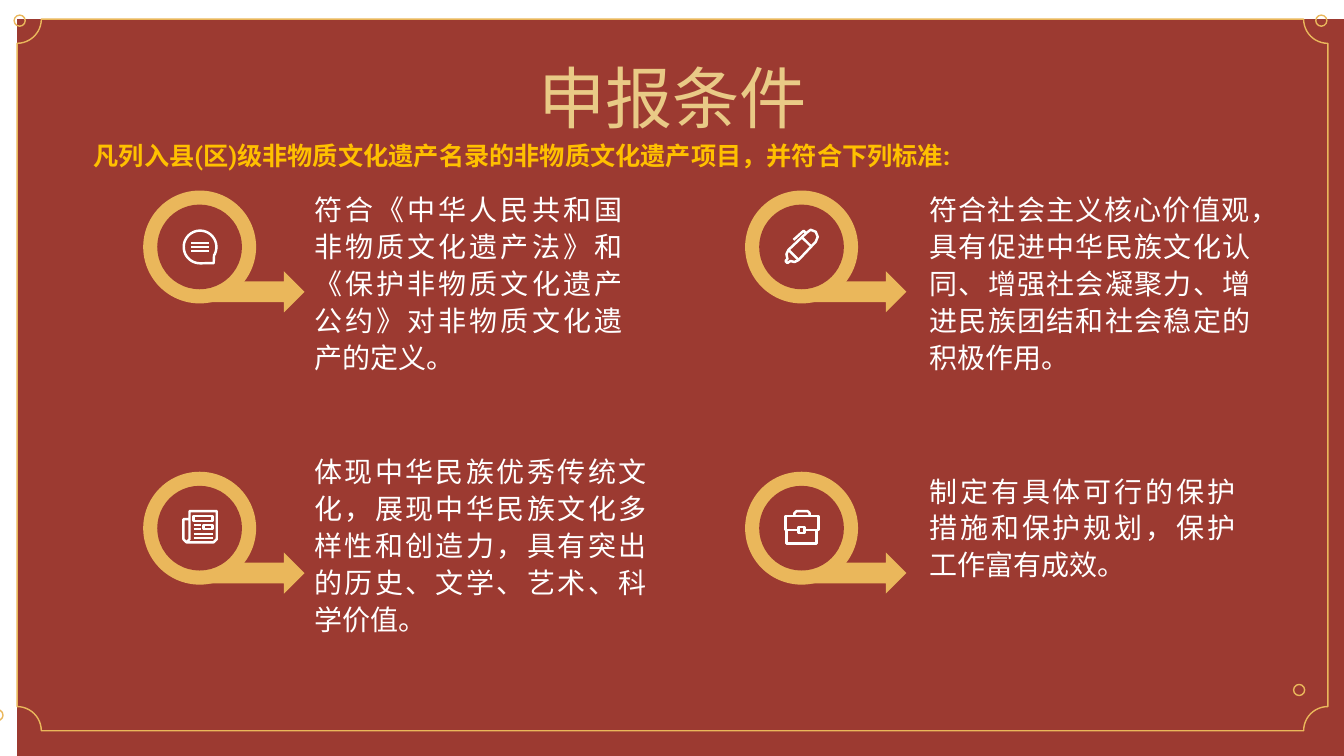
from dataclasses import dataclass
from math import cos, radians, sin

from lxml.etree import SubElement
from pptx import Presentation
from pptx.dml.color import RGBColor
from pptx.enum.shapes import MSO_SHAPE as Preset
from pptx.enum.text import MSO_AUTO_SIZE as AutoSize, PP_ALIGN as Align
from pptx.oxml.ns import qn
from pptx.util import Inches, Pt


@dataclass(frozen=True)
class Theme:
    """Colours, fonts and type sizes of the slide."""
    red: str = "9C3A31"
    gold: str = "EAB75B"
    pale_gold: str = "E9CA86"
    amber: str = "FFC000"
    white: str = "FFFFFF"
    font: str = "Noto Sans CJK SC"
    lead_font: str = "Roboto"
    title_size: int = 48
    lead_size: int = 18
    body_size: int = 20
    frame_line: float = 1
    icon_line: float = 1.75


THEME = Theme()


def box(left, top, right, bottom):
    """Return the corners of a closed rectangular stroke."""
    return [(left, top), (right, top), (right, bottom), (left, bottom), (left, top)]


def rule(left, right, y):
    """Return a horizontal stroke."""
    return [(left, y), (right, y)]


BUBBLE_ARC = [(0.175 + 0.162 * cos(radians(angle)), 0.18 + 0.162 * sin(radians(angle)))
              for angle in range(90, 398, 7)]
SPEECH_ICON = [
    BUBBLE_ARC + [(0.31, 0.34), BUBBLE_ARC[0]],
    *[rule(0.09, 0.26, y) for y in (0.14, 0.18, 0.22)],
]
PEN_ICON = [
    [(0.03, 0.3), (0.02, 0.25), (0.04, 0.21), (0.22, 0.04), (0.26, 0.01), (0.31, 0.03),
     (0.33, 0.08), (0.31, 0.13), (0.14, 0.31), (0.1, 0.33), (0.06, 0.32), (0.03, 0.34),
     (0.01, 0.32), (0.03, 0.3)],
    [(0.04, 0.21), (0.14, 0.31)],
    [(0.18, 0.09), (0.26, 0.17)],
    [(0.21, 0.04), (0.19, 0.02), (0.09, 0.11)],
]
NEWSPAPER_ICON = [
    [(0.07, 0.09), (0.01, 0.09), (0.01, 0.29), (0.04, 0.32), (0.31, 0.32), (0.34, 0.29),
     (0.34, 0.01), (0.07, 0.01), (0.07, 0.29), (0.04, 0.32)],
    box(0.11, 0.06, 0.3, 0.11),
    box(0.21, 0.15, 0.3, 0.19),
    *[rule(0.11, 0.18, y) for y in (0.15, 0.19)],
    *[rule(0.11, 0.3, y) for y in (0.24, 0.28)],
]
BRIEFCASE_ICON = [
    [(0.14, 0.2), (0.01, 0.2), (0.01, 0.06), (0.34, 0.06), (0.34, 0.2), (0.2, 0.2)],
    [(0.02, 0.2), (0.02, 0.33), (0.32, 0.33), (0.32, 0.2)],
    [(0.1, 0.06), (0.1, 0.03), (0.12, 0.01), (0.23, 0.01), (0.25, 0.03), (0.25, 0.06)],
    box(0.14, 0.17, 0.2, 0.23),
]

COLUMNS = (1.42, 7.39)
ROWS = (1.89, 4.68)
CONDITIONS = [
    (0, 0, SPEECH_ICON, (3.02, 1.83, 3.25, 1.95),
     "符合《中华人民共和国非物质文化遗产法》和《保护非物质文化遗产公约》对非物质文化遗产的定义。"),
    (1, 0, PEN_ICON, (9.12, 1.83, 3.38, 1.95),
     "符合社会主义核心价值观，具有促进中华民族文化认同、增强社会凝聚力、增进民族团结和社会稳定的积极作用。"),
    (0, 1, NEWSPAPER_ICON, (3.02, 4.43, 3.49, 1.95),
     "体现中华民族优秀传统文化，展现中华民族文化多样性和创造力，具有突出的历史、文学、艺术、科学价值。"),
    (1, 1, BRIEFCASE_ICON, (9.12, 4.62, 3.23, 1.21),
     "制定有具体可行的保护措施和保护规划，保护工作富有成效。"),
]
CORNER_RINGS = [(0.14, 0.15), (13.05, 0.15), (-0.08, 7.04), (12.83, 6.79)]


def paint(shape, fill=None, line=None, width=THEME.frame_line):
    """Set the fill and outline of a shape and drop its shadow."""
    shape.shadow.inherit = False
    if fill:
        shape.fill.solid()
        shape.fill.fore_color.rgb = RGBColor.from_string(fill)
    else:
        shape.fill.background()
    if line:
        shape.line.color.rgb = RGBColor.from_string(line)
        shape.line.width = Pt(width)
    else:
        shape.line.fill.background()


def add_preset(slide, preset, bounds, **style):
    """Add a painted preset shape."""
    shape = slide.shapes.add_shape(preset, *map(Inches, bounds))
    paint(shape, **style)
    return shape


def add_text(slide, text, bounds, size=THEME.body_size, color=THEME.white,
             font=THEME.font, bold=False, align=Align.LEFT, spacing=1.0):
    """Add a wrapping text box with one formatted paragraph."""
    frame = slide.shapes.add_textbox(*map(Inches, bounds)).text_frame
    frame.word_wrap = True
    frame.auto_size = AutoSize.SHAPE_TO_FIT_TEXT
    paragraph = frame.paragraphs[0]
    paragraph.alignment = align
    paragraph.line_spacing = spacing
    run = paragraph.add_run()
    run.text = text
    run.font.size = Pt(size)
    run.font.bold = bold
    run.font.color.rgb = RGBColor.from_string(color)
    run.font.name = font
    SubElement(run.font._element, qn("a:ea"), typeface=font)


def add_icon(slide, strokes, left, top):
    """Add a white line icon made of several strokes."""
    contours = [[(Inches(x), Inches(y)) for x, y in stroke] for stroke in strokes]
    builder = slide.shapes.build_freeform(*contours[0][0])
    builder.add_line_segments(contours[0][1:], close=False)
    for contour in contours[1:]:
        builder.move_to(*contour[0])
        builder.add_line_segments(contour[1:], close=False)
    paint(builder.convert_to_shape(Inches(left), Inches(top)),
          line=THEME.white, width=THEME.icon_line)


def add_marker(slide, icon, left, top):
    """Add a ring with its arrow and icon."""
    add_preset(slide, Preset.RIGHT_ARROW, (left + 0.48, top + 0.8, 1.12, 0.41), fill=THEME.gold)
    add_preset(slide, Preset.OVAL, (left, top, 1.12, 1.12), fill=THEME.gold)
    add_preset(slide, Preset.OVAL, (left + 0.14, top + 0.14, 0.84, 0.84), fill=THEME.red)
    add_icon(slide, icon, left + 0.39, top + 0.38)


def add_backdrop(slide):
    """Add the red panel, its gold frame and the corner rings."""
    add_preset(slide, Preset.RECTANGLE, (0.17, 0.19, 13.33, 7.5), fill=THEME.red)
    frame = add_preset(slide, Preset.PLAQUE, (0.17, 0.19, 13, 7.06), line=THEME.gold)
    frame.adjustments[0] = 0.034
    for left, top in CORNER_RINGS:
        add_preset(slide, Preset.OVAL, (left, top, 0.11, 0.11), line=THEME.gold)


def main():
    """Build and save the slide."""
    presentation = Presentation()
    presentation.slide_width = Inches(13.33)
    presentation.slide_height = Inches(7.5)
    slide = presentation.slides.add_slide(presentation.slide_layouts[6])
    add_backdrop(slide)
    add_text(slide, "申报条件", (4.73, 0.51, 3.88, 0.91), size=THEME.title_size,
             color=THEME.pale_gold, align=Align.CENTER)
    add_text(slide, "凡列入县(区)级非物质文化遗产名录的非物质文化遗产项目，并符合下列标准:",
             (0.83, 1.34, 9.38, 0.4), size=THEME.lead_size, color=THEME.amber,
             font=THEME.lead_font, bold=True)
    for column, row, icon, bounds, text in CONDITIONS:
        add_marker(slide, icon, COLUMNS[column], ROWS[row])
        add_text(slide, text, bounds, align=Align.JUSTIFY, spacing=1.1)
    presentation.save("out.pptx")


if __name__ == "__main__":
    main()
